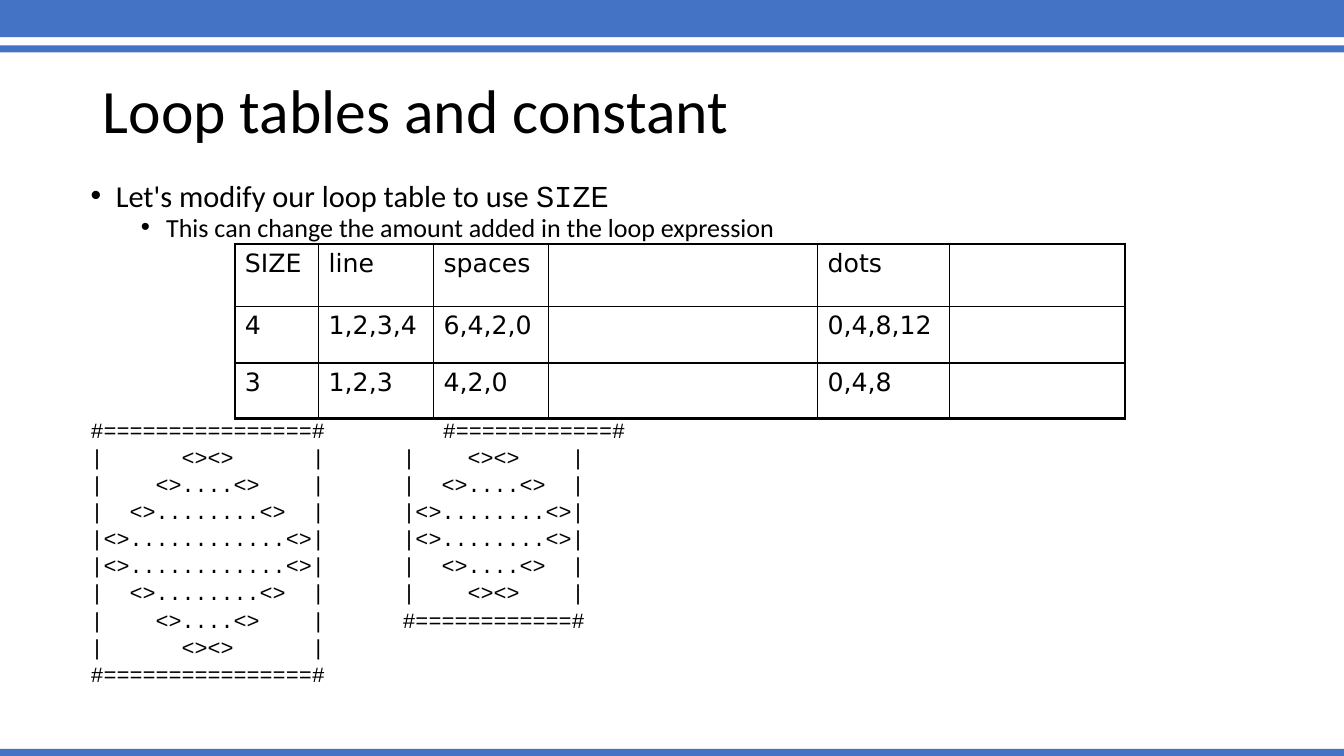
"""Build the slide about loop tables that use a SIZE constant."""
from lxml.etree import SubElement
from pptx import Presentation
from pptx.dml.color import RGBColor
from pptx.enum.shapes import MSO_SHAPE as Shape
from pptx.enum.text import MSO_ANCHOR as Anchor, PP_ALIGN as Align
from pptx.oxml.ns import qn
from pptx.util import Inches, Pt

WIDTH, HEIGHT = Inches(13.33), Inches(7.5)
BLUE, BLACK = "4472C4", "000000"
SANS, MONO, TABLE_FONT = "Calibri", "Courier New", "DejaVu Sans"
BARS = [(0, 4.93), (6, 0.93), (99.07, 0.93)]
COLUMNS = [6.23, 8.55, 8.55, 20.03, 9.83, 13.05]
ROWS = [8.27, 7.47, 7.33]
LOOP_TABLE = [
    ["SIZE", "line", "spaces", "", "dots", ""],
    ["4", "1,2,3,4", "6,4,2,0", "", "0,4,8,12", ""],
    ["3", "1,2,3", "4,2,0", "", "0,4,8", ""],
]


def color(hex_code):
    """Return the colour for a hex string."""
    return RGBColor.from_string(hex_code)


def across(percent):
    """Return a percentage of the slide's width."""
    return int(WIDTH * percent / 100)


def down(percent):
    """Return a percentage of the slide's height."""
    return int(HEIGHT * percent / 100)


def area(left, top, width, height):
    """Return a position and size from percentages of the slide."""
    return across(left), down(top), across(width), down(height)


def write(para, text, font=SANS, size=18, fill=BLACK):
    """Add a formatted span of text to a paragraph."""
    span = para.add_run()
    span.text = text
    span.font.name = font
    span.font.size = Pt(size)
    span.font.color.rgb = color(fill)


def add_bar(page, top, height):
    """Add a blue bar over the full width of the slide."""
    bar = page.shapes.add_shape(Shape.RECTANGLE, *area(0, top, 100, height))
    bar.shadow.inherit = False
    bar.fill.solid()
    bar.fill.fore_color.rgb = color(BLUE)
    bar.line.fill.background()


def add_title(page, text):
    """Place and fill the title placeholder."""
    title = page.shapes.title
    title.left, title.top, title.width, title.height = area(6.9, 5.33, 86.27, 19.33)
    title.text_frame.vertical_anchor = Anchor.MIDDLE
    para = title.text_frame.paragraphs[0]
    para.alignment = Align.LEFT
    para.line_spacing = 0.9
    write(para, text, size=44)


def add_frame(page, *place):
    """Add a wrapping text box and return its text frame."""
    frame = page.shapes.add_textbox(*area(*place)).text_frame
    frame.word_wrap = True
    return frame


def next_para(frame, index):
    """Return the first paragraph of a frame, or a new one after it."""
    return frame.add_paragraph() if index else frame.paragraphs[0]


def set_indent(para, left, hanging=0):
    """Set a paragraph's left margin and its hanging indent."""
    properties = para._p.get_or_add_pPr()
    properties.set("marL", str(Inches(left)))
    properties.set("indent", str(-Inches(hanging)))
    return properties


def add_bullets(page, bullets):
    """Add bullets given as a level, a size and spans of text and font."""
    frame = add_frame(page, 6, 24.13, 86.27, 8)
    for index, (level, size, spans) in enumerate(bullets):
        para = next_para(frame, index)
        para.level = level
        para.line_spacing = 0.7
        para.space_before = Pt(5 * index)
        properties = set_indent(para, 0.25 + 0.5 * level, 0.25)
        SubElement(properties, qn("a:buFont"), typeface="Arial")
        SubElement(properties, qn("a:buChar"), char="•")
        for text, font in spans:
            write(para, text, font, size)


def set_border(cell, side, weight):
    """Draw one side of a cell with a black line."""
    properties = cell._tc.get_or_add_tcPr()
    line = SubElement(properties, qn("a:ln" + side), w=str(Pt(weight)))
    solid = SubElement(line, qn("a:solidFill"))
    SubElement(solid, qn("a:srgbClr"), val=BLACK)


def add_loop_table(page):
    """Add the loop table with a heavy outer frame."""
    place = area(17.48, 32.27, sum(COLUMNS), sum(ROWS))
    table = page.shapes.add_table(len(ROWS), len(COLUMNS), *place).table
    table.first_row = table.horz_banding = False
    for column, width in zip(table.columns, COLUMNS):
        column.width = across(width)
    last_row, last_column = len(ROWS) - 1, len(COLUMNS) - 1
    for r, values in enumerate(LOOP_TABLE):
        table.rows[r].height = down(ROWS[r])
        for c, value in enumerate(values):
            cell = table.cell(r, c)
            outer = {"L": c == 0, "R": c == last_column, "T": r == 0, "B": r == last_row}
            for side, heavy in outer.items():
                set_border(cell, side, 2.25 if heavy else 1)
            cell.fill.background()
            if value:
                write(cell.text_frame.paragraphs[0], value, TABLE_FONT)


def mirror_lines(size):
    """Return the lines of the mirror figure for a size."""
    inner = 4 * size
    edge = "#" + "=" * inner + "#"
    top = [
        "|" + ("<>" + "." * (4 * line) + "<>").center(inner) + "|"
        for line in range(size)
    ]
    return [edge, *top, *reversed(top), edge]


def add_mirror(page, size, left, first_indent=0):
    """Add a mirror figure, with its first line moved right if asked."""
    frame = add_frame(page, left, 54.27, 22, 38)
    for index, line in enumerate(mirror_lines(size)):
        para = next_para(frame, index)
        para.line_spacing = Pt(19.4)
        set_indent(para, 0 if index else first_indent)
        write(para, line, MONO, 15.5)


def main():
    """Build the slide and save it."""
    deck = Presentation()
    deck.slide_width, deck.slide_height = WIDTH, HEIGHT
    page = deck.slides.add_slide(deck.slide_layouts[5])
    for top, height in BARS:
        add_bar(page, top, height)
    add_title(page, "Loop tables and constant")
    add_bullets(page, [
        (0, 21.7, [("Let's modify our loop table to use ", SANS), ("SIZE", MONO)]),
        (1, 18.6, [("This can change the amount added in the loop expression", SANS)]),
    ])
    add_loop_table(page)
    add_mirror(page, 4, 6)
    add_mirror(page, 3, 29.21, first_indent=0.4)
    deck.save("out.pptx")


if __name__ == "__main__":
    main()
